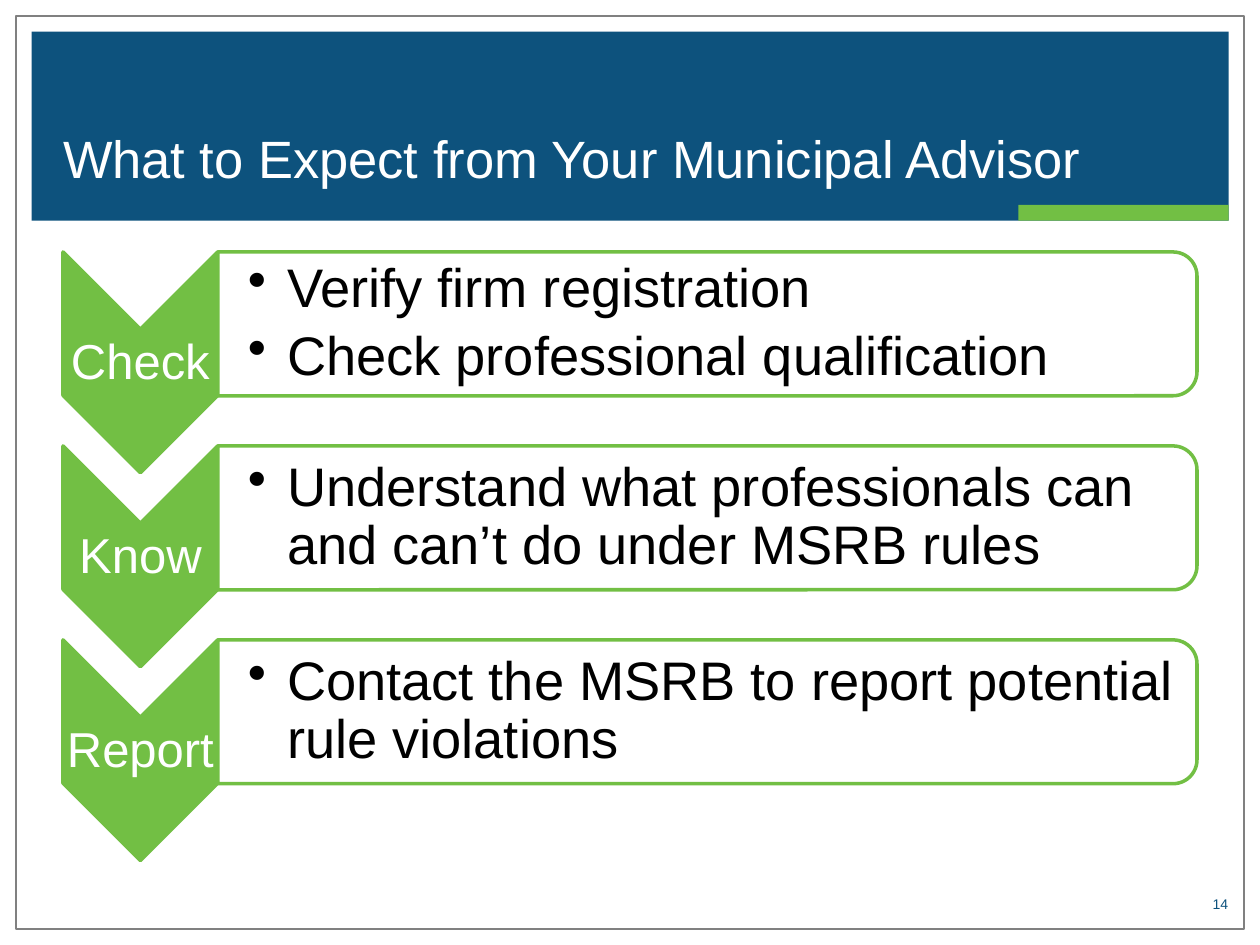
from lxml.etree import SubElement
from pptx import Presentation
from pptx.dml.color import RGBColor
from pptx.enum.shapes import MSO_SHAPE
from pptx.enum.text import MSO_ANCHOR, PP_ALIGN
from pptx.oxml.ns import qn
from pptx.util import Cm, Pt

COLORS = {
    "blue": "0D527D",
    "green": "72BF44",
    "gray": "808080",
    "white": "FFFFFF",
    "black": "000000",
}
STEPS = [
    ("Check", ["Verify firm registration", "Check professional qualification"]),
    ("Know", ["Understand what professionals can and can’t do under MSRB rules"]),
    ("Report", ["Contact the MSRB to report potential rule violations"]),
]
LEFT, TOP, PITCH = 1.27, 5.08, 3.91
CHEVRON_WIDTH, CHEVRON_HEIGHT = 3.12, 4.45
PANEL_WIDTH, PANEL_HEIGHT = 19.74, 2.9


class SlideBuilder:
    font_name = "Arial"

    def __init__(self, slide):
        self.slide = slide

    def color(self, name):
        return RGBColor.from_string(COLORS[name])

    def style(self, paragraph, size, color):
        paragraph.font.name = self.font_name
        paragraph.font.size = Pt(size)
        paragraph.font.color.rgb = self.color(color)

    def frame(self, shape, anchor, margin=0, margin_left=0):
        frame = shape.text_frame
        frame.word_wrap = True
        frame.vertical_anchor = anchor
        frame.margin_top = frame.margin_right = frame.margin_bottom = Cm(margin)
        frame.margin_left = Cm(margin_left)
        return frame

    def shape(self, kind, left, top, width, height, fill=None, line=None, line_width=2):
        shape = self.slide.shapes.add_shape(kind, Cm(left), Cm(top), Cm(width), Cm(height))
        shape.shadow.inherit = False
        if fill:
            shape.fill.solid()
            shape.fill.fore_color.rgb = self.color(fill)
        else:
            shape.fill.background()
        if line:
            shape.line.color.rgb = self.color(line)
            shape.line.width = Pt(line_width)
        else:
            shape.line.fill.background()
        return shape

    def turned_shape(self, kind, left, top, width, height, fill, line):
        shift = (width - height) / 2
        shape = self.shape(kind, left + shift, top - shift, height, width, fill, line)
        shape.rotation = 90

    def title(self, text, left, top, width, height):
        title = self.slide.shapes.title
        title.left, title.top, title.width, title.height = map(Cm, (left, top, width, height))
        self.slide.shapes._spTree.append(title._element)
        frame = self.frame(title, MSO_ANCHOR.BOTTOM)
        frame.text = text
        paragraph = frame.paragraphs[0]
        paragraph.alignment = PP_ALIGN.LEFT
        self.style(paragraph, 30, "white")

    def label(self, text, left, top, width, height, size, color, alignment, anchor, margin=0):
        box = self.slide.shapes.add_textbox(Cm(left), Cm(top), Cm(width), Cm(height))
        frame = self.frame(box, anchor, margin, margin)
        frame.text = text
        paragraph = frame.paragraphs[0]
        paragraph.alignment = alignment
        self.style(paragraph, size, color)
        return paragraph

    def bullets(self, items, left, top, width, height):
        box = self.slide.shapes.add_textbox(Cm(left), Cm(top), Cm(width), Cm(height))
        frame = self.frame(box, MSO_ANCHOR.MIDDLE, 0.05, 0.61)
        frame.text = "\n".join(items)
        for paragraph in frame.paragraphs:
            paragraph.line_spacing = 0.9
            paragraph.space_after = Pt(5.35)
            properties = paragraph._p.get_or_add_pPr()
            properties.set("marL", str(Cm(0.79)))
            properties.set("indent", str(-Cm(0.79)))
            SubElement(properties, qn("a:buChar"), char="•")
            self.style(paragraph, 31, "black")

    def step(self, name, items, top):
        panel_left = LEFT + CHEVRON_WIDTH
        self.turned_shape(MSO_SHAPE.CHEVRON, LEFT, top, CHEVRON_WIDTH, CHEVRON_HEIGHT,
                          "green", "green")
        paragraph = self.label(name, LEFT, top + 1.57, CHEVRON_WIDTH, 1.35, 28, "white",
                               PP_ALIGN.CENTER, MSO_ANCHOR.MIDDLE, 0.05)
        paragraph.line_spacing = 0.9
        paragraph.space_after = Pt(11.3)
        self.turned_shape(MSO_SHAPE.ROUND_2_SAME_RECTANGLE, panel_left, top,
                          PANEL_WIDTH, PANEL_HEIGHT, "white", "green")
        self.bullets(items, panel_left, top + 0.14, PANEL_WIDTH - 0.14, PANEL_HEIGHT - 0.28)


def main():
    presentation = Presentation()
    presentation.slide_width, presentation.slide_height = Cm(25.4), Cm(19.05)
    slide = presentation.slides.add_slide(presentation.slide_layouts[5])
    builder = SlideBuilder(slide)
    builder.shape(MSO_SHAPE.RECTANGLE, 0.32, 0.32, 24.76, 18.41, line="gray", line_width=1)
    builder.shape(MSO_SHAPE.RECTANGLE, 0.64, 0.64, 24.13, 3.81, fill="blue")
    builder.shape(MSO_SHAPE.RECTANGLE, 20.53, 4.13, 4.24, 0.32, fill="green")
    builder.label("14", 16.93, 18.06, 7.83, 0.33, 8, "blue", PP_ALIGN.RIGHT, MSO_ANCHOR.BOTTOM)
    builder.title("What to Expect from Your Municipal Advisor", 1.27, 1.07, 22.86, 2.74)
    for index, (name, items) in enumerate(STEPS):
        builder.step(name, items, TOP + index * PITCH)
    presentation.save("out.pptx")


if __name__ == "__main__":
    main()
